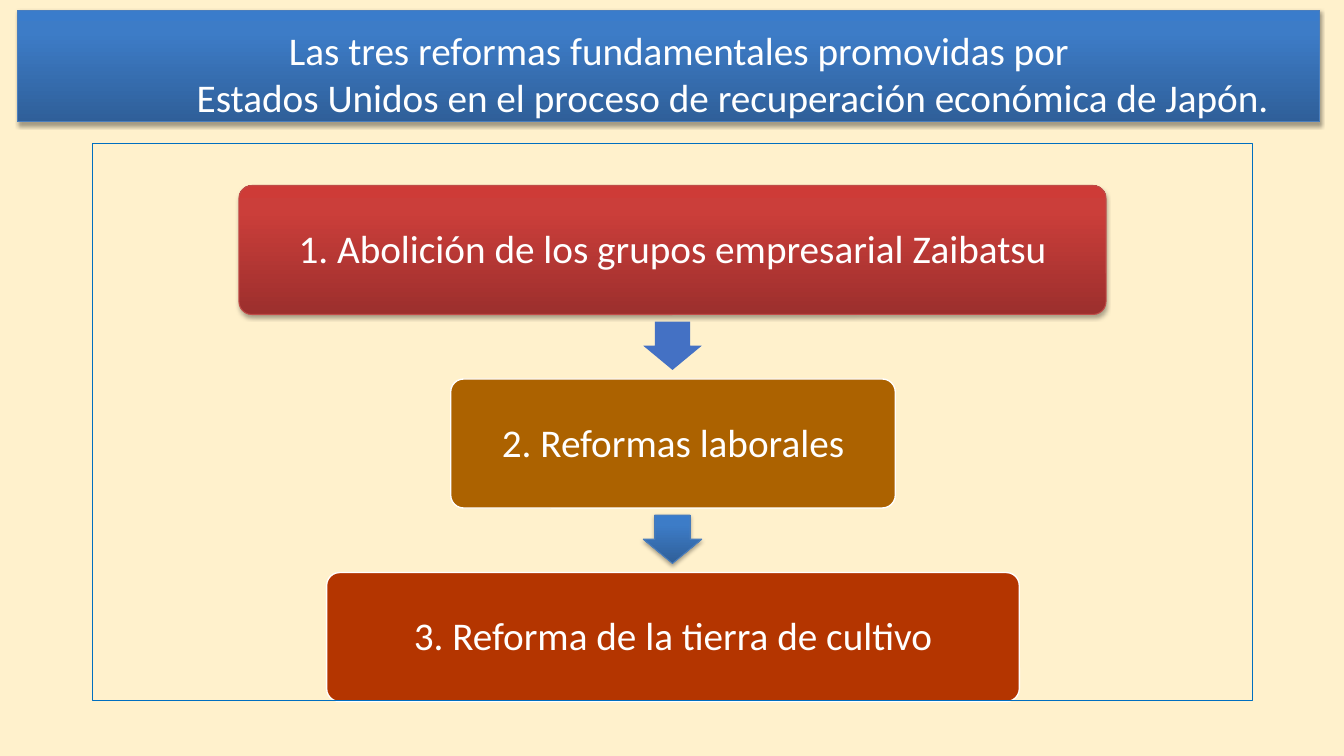
from copy import deepcopy

from pptx import Presentation
from pptx import util as u
from pptx.dml.color import RGBColor
from pptx.enum import shapes, text
from pptx.oxml import parse_xml
from pptx.oxml.ns import nsdecls, qn

CREAM = RGBColor(0xFF, 0xF1, 0xCC)
WHITE = RGBColor(0xFF, 0xFF, 0xFF)
BLUE = RGBColor(0x44, 0x71, 0xC4)
BLUE_EDGE = RGBColor(0x4B, 0x7E, 0xBC)
FRAME_BLUE = RGBColor(0x00, 0x6F, 0xC0)
RED_EDGE = RGBColor(0xBF, 0x4C, 0x48)
OCHRE = RGBColor(0xAC, 0x62, 0x00)
RUST = RGBColor(0xB4, 0x35, 0x00)
BLUE_GRADIENT = (RGBColor(0x2F, 0x5F, 0x99), RGBColor(0x3D, 0x7C, 0xC7), RGBColor(0x3A, 0x7C, 0xCB))
RED_GRADIENT = (RGBColor(0x9C, 0x2F, 0x2D), RGBColor(0xCB, 0x3E, 0x3A), RGBColor(0xCE, 0x3B, 0x37))
STOP_POSITIONS = (0, 0.8, 1)

CENTER_X = 667
FIRST_TOP = 184
STEP = 192
BOX_HEIGHT = 128
ARROW_OFFSET = 135
ARROW_WIDTH, ARROW_HEIGHT = 58, 48


def px(value):
    return u.Emu(value * 9144)


class SlideBuilder:
    font = "Calibri"
    size = u.Pt(28)

    def __init__(self, page):
        self.page = page

    def background(self, color):
        fill = self.page.background.fill
        fill.solid()
        fill.fore_color.rgb = color

    def shape(self, kind, left, top, width, height, fill=None, edge=None, weight=0.75):
        shape = self.page.shapes.add_shape(kind, px(left), px(top), px(width), px(height))
        shape.shadow.inherit = False
        if fill is None:
            shape.fill.background()
        elif isinstance(fill, tuple) and not isinstance(fill, RGBColor):
            self.gradient(shape, fill)
            self.shadow(shape)
        else:
            shape.fill.solid()
            shape.fill.fore_color.rgb = fill
        if edge is None:
            shape.line.fill.background()
        else:
            shape.line.color.rgb = edge
            shape.line.width = u.Pt(weight)
        return shape

    def gradient(self, shape, colors):
        shape.fill.gradient()
        shape.fill.gradient_angle = 90
        stop_list = shape._element.spPr.find(".//" + qn("a:gsLst"))
        stop_list.append(deepcopy(stop_list[-1]))
        for stop, color, position in zip(shape.fill.gradient_stops, colors, STOP_POSITIONS):
            stop.color.rgb = color
            stop.position = position

    def shadow(self, shape):
        shape._element.spPr.find(qn("a:effectLst")).append(parse_xml(
            f'<a:outerShdw {nsdecls("a")} blurRad="{u.Pt(3.1)}" dist="{u.Pt(1.8)}" '
            'dir="5400000" rotWithShape="0"><a:srgbClr val="000000">'
            '<a:alpha val="35000"/></a:srgbClr></a:outerShdw>'))

    def label(self, shape, words, anchor, top=0, bottom=0):
        frame = shape.text_frame
        frame.word_wrap = True
        frame.vertical_anchor = anchor
        frame.margin_left = frame.margin_right = 0
        frame.margin_top, frame.margin_bottom = px(top), px(bottom)
        para = frame.paragraphs[0]
        para.text = words
        para.alignment = text.PP_ALIGN.CENTER
        for span in para.runs:
            span.font.name = self.font
            span.font.size = self.size
            span.font.color.rgb = WHITE
        return para

    def title(self, words):
        bar = self.shape(shapes.MSO_SHAPE.RECTANGLE, 17, 10, 1292, 111, BLUE_GRADIENT, BLUE_EDGE)
        para = self.label(bar, words, text.MSO_ANCHOR.TOP, top=16)
        para.space_before = u.Pt(11.8)
        properties = para._p.get_or_add_pPr()
        properties.set("marL", str(px(127)))
        properties.set("indent", str(px(-98)))

    def reform(self, words, top, width, fill, edge, weight):
        box = self.shape(shapes.MSO_SHAPE.ROUNDED_RECTANGLE, CENTER_X - width // 2, top,
                         width, BOX_HEIGHT, fill, edge, weight)
        box.adjustments[0] = 0.1
        self.label(box, words, text.MSO_ANCHOR.MIDDLE, bottom=4)

    def arrow(self, top, fill, edge):
        arrow = self.shape(shapes.MSO_SHAPE.DOWN_ARROW, CENTER_X - ARROW_WIDTH // 2, top,
                           ARROW_WIDTH, ARROW_HEIGHT, fill, edge)
        arrow.adjustments[0] = 0.6
        arrow.adjustments[1] = 0.5

    def frame(self):
        self.shape(shapes.MSO_SHAPE.RECTANGLE, 92, 142, 1150, 553, edge=FRAME_BLUE, weight=0.72)


def main():
    deck = Presentation()
    deck.slide_width, deck.slide_height = px(1333), px(750)
    slide = SlideBuilder(deck.slides.add_slide(deck.slide_layouts[6]))
    slide.background(CREAM)
    slide.title("Las tres reformas fundamentales promovidas por \v"
                "Estados Unidos en el proceso de recuperación económica de Japón.")

    reforms = [
        ("1. Abolición de los grupos empresarial Zaibatsu", 860, RED_GRADIENT, RED_EDGE, 0.75),
        ("2. Reformas laborales", 441, OCHRE, WHITE, 0.96),
        ("3. Reforma de la tierra de cultivo", 687, RUST, WHITE, 0.96),
    ]
    for index, (words, *style) in enumerate(reforms):
        slide.reform(words, FIRST_TOP + index * STEP, *style)
    for index, style in enumerate([(BLUE, None), (BLUE_GRADIENT, BLUE_EDGE)]):
        slide.arrow(FIRST_TOP + ARROW_OFFSET + index * STEP, *style)
    slide.frame()
    deck.save("out.pptx")


if __name__ == "__main__":
    main()
